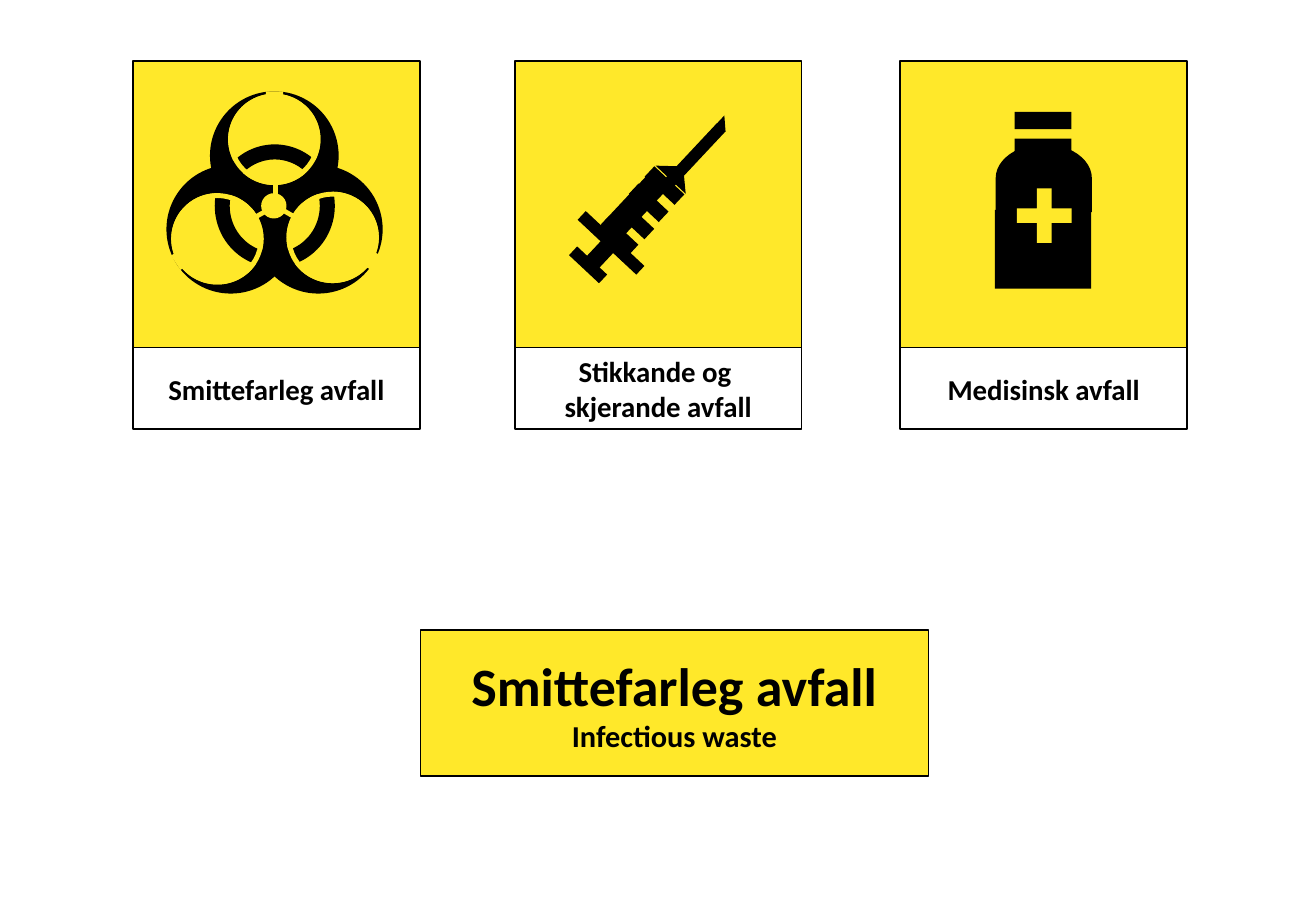
"""Build a slide of three waste labels and one text banner."""
from lxml import etree
from pptx import Presentation
from pptx.dml.color import RGBColor
from pptx.enum.shapes import MSO_CONNECTOR as Link, MSO_SHAPE as Kind
from pptx.enum.text import MSO_ANCHOR as Anchor, PP_ALIGN as Align
from pptx.oxml.ns import qn
from pptx.util import Cm, Pt

BLACK, YELLOW, WHITE = "000000", "FFE82A", "FFFFFF"
FONT = "Calibri"
TOP, SIDE, FULL = 1.27, 6, 7.7
TILT = 313.1

HOLES = [(1.99, 0.69, 1.93, 1.91), (0.8, 2.77, 1.93, 1.91), (3.21, 2.74, 1.93, 1.91)]
LOBES = [(1.61, 0.64, 2.69, 2.69), (0.7, 2.18, 2.69, 2.69), (2.53, 2.18, 2.69, 2.69)]
SPOKES = [((2.93, 2.39, 0.1, 0.53), 0), ((3.24, 2.95, 0.1, 0.53), 300.2),
          ((2.6, 2.95, 0.1, 0.53), 240.6)]
CUTS = [((2.78, 0.64, 0.36, 0.28), 0), ((0.83, 4.01, 0.36, 0.28), 57.1),
        ((4.76, 4.01, 0.36, 0.28), 117.6)]
HAZARD = (
    [(Kind.OVAL, box, BLACK, 0, None) for box in LOBES]
    + [(Kind.OVAL, box, YELLOW, 0, None) for box in HOLES]
    + [(Kind.OVAL, (2.68, 2.77, 0.53, 0.53), YELLOW, 0, None)]
    + [(Kind.RECTANGLE, box, YELLOW, turn, None) for box, turn in SPOKES]
    + [(Kind.DONUT, (1.71, 1.75, 2.51, 2.57), BLACK, 0, 0.125)]
    + [(Kind.RECTANGLE, box, YELLOW, turn, None) for box, turn in CUTS]
    + [(Kind.DONUT, box, YELLOW, 0, 0.053) for box in HOLES]
)

BARS = [
    (1.87, 3.3, 0.48, 0.86), (1.31, 3.78, 1.12, 0.36), (2.78, 1.93, 1.83, 0.25),
    (1.41, 3.84, 0.25, 0.86), (1.89, 2.97, 0.25, 1.68), (2.35, 2.9, 0.3, 0.86),
    (2.65, 2.54, 0.3, 0.86), (2.98, 2.18, 0.3, 0.86), (1.74, 2.74, 1.63, 0.51),
]
NEEDLE = [(Kind.RECTANGLE, box, BLACK, TILT, None) for box in BARS] + [
    (Kind.ISOSCELES_TRIANGLE, (2.96, 2.16, 0.86, 0.38), BLACK, 43.1, None),
    (Kind.RIGHT_TRIANGLE, (4.28, 1.19, 0.23, 0.25), BLACK, TILT, None),
]

BOTTLE = [
    (Kind.FLOWCHART_DELAY, (2.29, 1.45, 1.42, 2.01), BLACK, 270, None),
    (Kind.RECTANGLE, (1.98, 3.12, 2.01, 1.65), BLACK, 0, None),
    (Kind.RECTANGLE, (2.39, 1.63, 1.19, 0.46), BLACK, 0, None),
    (Kind.RECTANGLE, (2.39, 1.07, 1.19, 0.36), BLACK, 0, None),
    (Kind.CROSS, (2.44, 2.67, 1.14, 1.14), YELLOW, 0, 0.365),
]

LABELS = [
    (10.76, ["Stikkande og ", "skjerande avfall"], NEEDLE),
    (2.78, ["Smittefarleg avfall"], HAZARD),
    (18.82, ["Medisinsk avfall"], BOTTLE),
]
BANNER = (8.79, 13.18, 10.62, 3.05)
WORDS = [(["Smittefarleg avfall"], 32), (["Infectious waste"], 18)]


def paint(tone):
    return RGBColor.from_string(tone)


def draw(kind, box, fill=None, edge=False):
    part = slide.shapes.add_shape(kind, *map(Cm, box))
    part.shadow.inherit = False
    if fill:
        part.fill.solid()
        part.fill.fore_color.rgb = paint(fill)
    else:
        part.fill.background()
    if edge:
        part.line.color.rgb = paint(BLACK)
        part.line.width = Pt(1)
    else:
        part.line.fill.background()
    return part


def write(part, paras):
    frame = part.text_frame
    frame.word_wrap = True
    frame.vertical_anchor = Anchor.MIDDLE
    for i, (rows, size) in enumerate(paras):
        para = frame.add_paragraph() if i else frame.paragraphs[0]
        para.alignment = Align.CENTER
        for j, row in enumerate(rows):
            if j:
                para.add_line_break()
            run = para.add_run()
            run.text = row
            run.font.name, run.font.size, run.font.bold = FONT, Pt(size), True
            run.font.color.rgb = paint(BLACK)


def rule(left, y):
    line = slide.shapes.add_connector(
        Link.STRAIGHT, Cm(left), Cm(y), Cm(left + SIDE), Cm(y))
    line.line.color.rgb = paint(BLACK)
    line.line.width = Pt(1)
    etree.SubElement(line._element.spPr, qn("a:effectLst"))


def label(left, rows, icon):
    fold = TOP + SIDE
    note = draw(Kind.RECTANGLE, (left, fold + 0.04, SIDE, 1.63), WHITE)
    write(note, [(rows, 17.1)])
    draw(Kind.RECTANGLE, (left, TOP, SIDE, SIDE), YELLOW)
    for kind, (x, y, wide, high), fill, turn, adjust in icon:
        part = draw(kind, (left + x, TOP + y, wide, high), fill)
        part.rotation = turn
        if adjust:
            part.adjustments[0] = adjust
        if kind == Kind.RIGHT_TRIANGLE:
            part._element.spPr.get_or_add_xfrm().set("flipV", "1")
    draw(Kind.RECTANGLE, (left, TOP, SIDE, FULL), edge=True)
    rule(left, fold)


deck = Presentation()
deck.slide_width, deck.slide_height = Cm(27.51), Cm(19.05)
slide = deck.slides.add_slide(deck.slide_layouts[6])
for item in LABELS:
    label(*item)
write(draw(Kind.RECTANGLE, BANNER, YELLOW, edge=True), WORDS)
deck.save("out.pptx")
